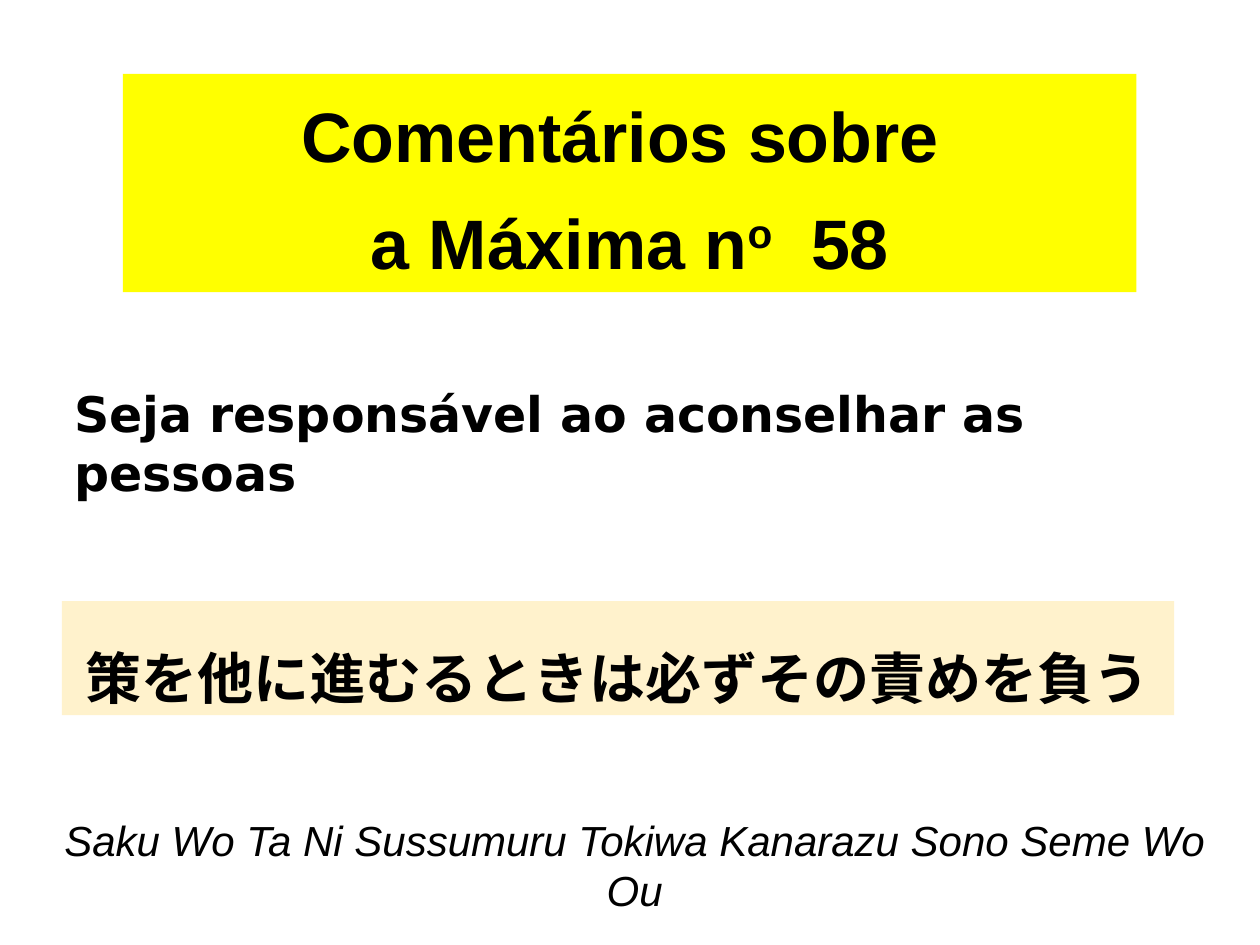
from dataclasses import dataclass
from typing import Optional

import pptx
import pptx.dml.color
import pptx.enum.shapes
import pptx.enum.text
import pptx.util
from pptx.util import Cm

BLACK = pptx.dml.color.RGBColor(0x00, 0x00, 0x00)
YELLOW = pptx.dml.color.RGBColor(0xFF, 0xFF, 0x00)
CREAM = pptx.dml.color.RGBColor(0xFF, 0xF2, 0xCC)
CENTER = pptx.enum.text.PP_ALIGN.CENTER
LEFT = pptx.enum.text.PP_ALIGN.LEFT


@dataclass(frozen=True)
class Span:
    text: str
    superscript: bool = False


@dataclass(frozen=True)
class Panel:
    """A text block in centimetres and points, filled or plain."""
    left: float
    top: float
    width: float
    height: float
    lines: list[list[Span]]
    size: int
    font: str
    fill: Optional[pptx.dml.color.RGBColor] = None
    align: pptx.enum.text.PP_ALIGN = CENTER
    bold: bool = True
    italic: bool = False
    line_spacing: float = 1.0
    space_after: int = 0
    top_inset: float = 0.13


PANELS = [
    Panel(2.48, 1.49, 20.43, 4.4,
          [[Span("Comentários sobre ")],
           [Span("a Máxima n"), Span("o", superscript=True), Span("  58")]],
          40, "Arial", fill=YELLOW, line_spacing=1.15, space_after=6),
    Panel(1.25, 12.12, 22.42, 2.3,
          [[Span("策を他に進むるときは必ずその責めを負う")]],
          32, "DejaVu Sans", fill=CREAM, top_inset=0.86),
    Panel(1.25, 7.6, 23.31, 2.65,
          [[Span("Seja responsável ao aconselhar as pessoas")]],
          28, "DejaVu Sans", align=LEFT),
    Panel(0.62, 16.28, 24.35, 1.28,
          [[Span("Saku Wo Ta Ni Sussumuru Tokiwa Kanarazu Sono Seme Wo Ou")]],
          24, "Arial", bold=False, italic=True),
]


def add_panel(page: pptx.slide.Slide, panel: Panel) -> None:
    bounds = [Cm(value) for value in (panel.left, panel.top, panel.width, panel.height)]
    if panel.fill is None:
        box = page.shapes.add_textbox(*bounds)
    else:
        box = page.shapes.add_shape(pptx.enum.shapes.MSO_SHAPE.RECTANGLE, *bounds)
        box.shadow.inherit = False
        box.fill.solid()
        box.fill.fore_color.rgb = panel.fill
        box.line.fill.background()
    frame = box.text_frame
    frame.word_wrap = True
    frame.vertical_anchor = pptx.enum.text.MSO_ANCHOR.TOP
    frame.margin_top = Cm(panel.top_inset)
    for index, line in enumerate(panel.lines):
        para = frame.add_paragraph() if index else frame.paragraphs[0]
        para.alignment = panel.align
        para.line_spacing = panel.line_spacing
        para.space_after = pptx.util.Pt(panel.space_after)
        para.font.name = panel.font
        para.font.size = pptx.util.Pt(panel.size)
        para.font.bold = panel.bold
        para.font.italic = panel.italic
        para.font.color.rgb = BLACK
        for span in line:
            run = para.add_run()
            run.text = span.text
            if span.superscript:
                run._r.get_or_add_rPr().set("baseline", "30000")


def main() -> None:
    deck = pptx.Presentation()
    deck.slide_width, deck.slide_height = Cm(25.4), Cm(19.05)
    page = deck.slides.add_slide(deck.slide_layouts[6])
    for panel in PANELS:
        add_panel(page, panel)
    deck.save("out.pptx")


if __name__ == "__main__":
    main()
